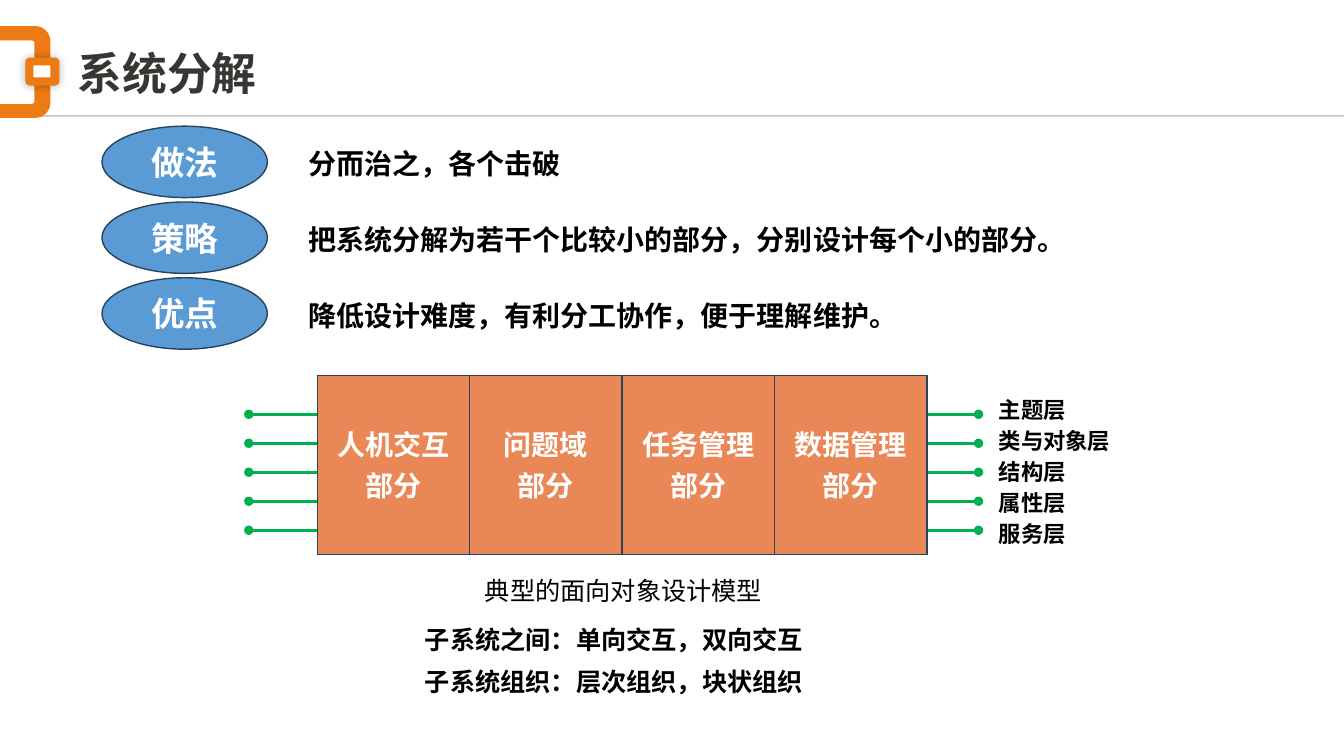
from math import cos, pi, sin

from lxml.etree import SubElement
from pptx import Presentation
from pptx.dml.color import RGBColor
from pptx.enum.shapes import MSO_CONNECTOR, MSO_SHAPE
from pptx.enum.text import MSO_ANCHOR, PP_ALIGN
from pptx.oxml.ns import qn
from pptx.util import Cm, Pt

SANS = "Noto Sans CJK SC"
ORANGE, WHITE, BLACK, GREEN = "EE7A13", "FFFFFF", "000000", "00B050"
GREY, EDGE, BLUE, CORAL = "363632", "28445D", "5B9BD5", "E98856"

ROWS = [
    ("做法", "分而治之，各个击破"),
    ("策略", "把系统分解为若干个比较小的部分，分别设计每个小的部分。"),
    ("优点", "降低设计难度，有利分工协作，便于理解维护。"),
]
PARTS = ["人机交互", "问题域", "任务管理", "数据管理"]
LAYERS = ["主题层", "类与对象层", "结构层", "属性层", "服务层"]
NOTES = ["子系统之间：单向交互，双向交互", "子系统组织：层次组织，块状组织"]


def tint(color, code):
    color.rgb = RGBColor.from_string(code)


def write(shape, lines, size, code, font=SANS, bold=True, align=PP_ALIGN.LEFT, gap=0):
    frame = shape.text_frame
    frame.word_wrap = True
    frame.text = "\n".join(lines)
    for i, para in enumerate(frame.paragraphs):
        para.alignment = align
        if i and gap:
            para.space_before = Pt(gap)
        para.font.size = Pt(size)
        para.font.bold = bold
        para.font.name = font
        tint(para.font.color, code)
        for props in para._p.iter(qn("a:defRPr")):
            SubElement(props, qn("a:ea"), typeface=SANS)
    return frame


def label(slide, text, x, y, wide, high, size, **style):
    box = slide.shapes.add_textbox(Cm(x), Cm(y), Cm(wide), Cm(high))
    return write(box, [text], size, BLACK, **style)


def paint(shape, fill, edge=None):
    shape.shadow.inherit = False
    shape.fill.solid()
    tint(shape.fill.fore_color, fill)
    if edge:
        tint(shape.line.color, edge)
        shape.line.width = Pt(1)
    else:
        shape.line.fill.background()


def block(slide, kind, x, y, wide, high, fill, edge=None):
    shape = slide.shapes.add_shape(kind, Cm(x), Cm(y), Cm(wide), Cm(high))
    paint(shape, fill, edge)
    return shape


def badge(slide, kind, lines, x, y, wide, high, fill, size):
    shape = block(slide, kind, x, y, wide, high, fill, EDGE)
    frame = write(shape, lines, size, WHITE, "Arial", align=PP_ALIGN.CENTER, gap=5)
    frame.vertical_anchor = MSO_ANCHOR.MIDDLE
    frame.margin_top = frame.margin_bottom = 0


def rule(slide, left, right, y, code, width):
    line = slide.shapes.add_connector(
        MSO_CONNECTOR.STRAIGHT, Cm(left), Cm(y), Cm(right), Cm(y))
    tint(line.line.color, code)
    line.line.width = Pt(width)
    SubElement(line._element.spPr, qn("a:effectLst"))
    return line.line._get_or_add_ln()


def tab(slide, top, right, low, bend, fill):
    """Panel on the left slide edge with two rounded right corners."""
    turns = [i * pi / 16 for i in range(9)]
    upper = [(right - bend + bend * sin(t), top + bend - bend * cos(t)) for t in turns]
    lower = [(x, top + low - y) for x, y in reversed(upper)]
    path = [(Cm(x), Cm(y)) for x, y in upper + lower + [(0, low)]]
    form = slide.shapes.build_freeform(Cm(0), Cm(top))
    form.add_line_segments(path, close=True)
    paint(form.convert_to_shape(), fill)


def header(slide):
    # Pale line under the title
    ln = rule(slide, 0.64, 33.87, 2.92, GREY, 1)
    SubElement(ln.find(".//" + qn("a:srgbClr")), qn("a:alpha"), val="31000")
    # Orange clasp
    tab(slide, 0.66, 1.27, 2.97, 0.38, ORANGE)
    tab(slide, 1.02, 0.87, 2.62, 0.08, WHITE)
    knob = block(slide, MSO_SHAPE.ROUNDED_RECTANGLE, 0.64, 1.45, 0.86, 0.71, ORANGE)
    glow = SubElement(knob._element.spPr.find(qn("a:effectLst")),
                      qn("a:outerShdw"), blurRad=str(Pt(6)), dist="0")
    shade = SubElement(glow, qn("a:srgbClr"), val=BLACK)
    SubElement(shade, qn("a:alpha"), val="30000")
    hole = block(slide, MSO_SHAPE.ROUNDED_RECTANGLE, 0.84, 1.65, 0.43, 0.3, WHITE)
    hole.adjustments[0] = 0.1
    # Title
    title = slide.shapes.title
    title.left, title.top, title.width, title.height = Cm(1.7), Cm(1.02), Cm(31.27), Cm(1.63)
    frame = write(title, ["系统分解"], 32, GREY, "Arial")
    frame.vertical_anchor = MSO_ANCHOR.MIDDLE


def model(slide):
    # Layers run behind the parts
    for i, name in enumerate(LAYERS):
        ln = rule(slide, 6.27, 24.66, 10.44 + 0.73 * i, GREEN, 2.25)
        for end in ("a:headEnd", "a:tailEnd"):
            SubElement(ln, qn(end), type="oval")
        label(slide, name, 24.92, 9.86 + 0.78 * i, 4.27, 0.94, 16)
    # Parts side by side
    for i, name in enumerate(PARTS):
        badge(slide, MSO_SHAPE.RECTANGLE, [name, "部分"],
              8 + 3.84 * i, 9.47, 3.84, 4.5, CORAL, 20)
    # Caption
    frame = label(slide, "典型的面向对象设计模型", 11.13, 14.22, 9.17, 1.09, 18,
                  bold=False, align=PP_ALIGN.CENTER)
    frame.paragraphs[0].line_spacing = 1.2


def main():
    deck = Presentation()
    deck.slide_width, deck.slide_height = Cm(33.87), Cm(19.05)
    slide = deck.slides.add_slide(deck.slide_layouts[5])
    header(slide)
    # Method, strategy and benefit
    for i, (name, text) in enumerate(ROWS):
        y = 3.18 + 1.91 * i
        badge(slide, MSO_SHAPE.OVAL, [name], 2.57, y, 4.17, 1.8, BLUE, 24)
        label(slide, text, 7.52, y + 0.39, 21.4, 1.11, 20)
    model(slide)
    # Closing notes
    for i, text in enumerate(NOTES):
        label(slide, text, 10.46, 15.6 + 1.07 * i, 13, 1.02, 18)
    deck.save("out.pptx")


if __name__ == "__main__":
    main()
